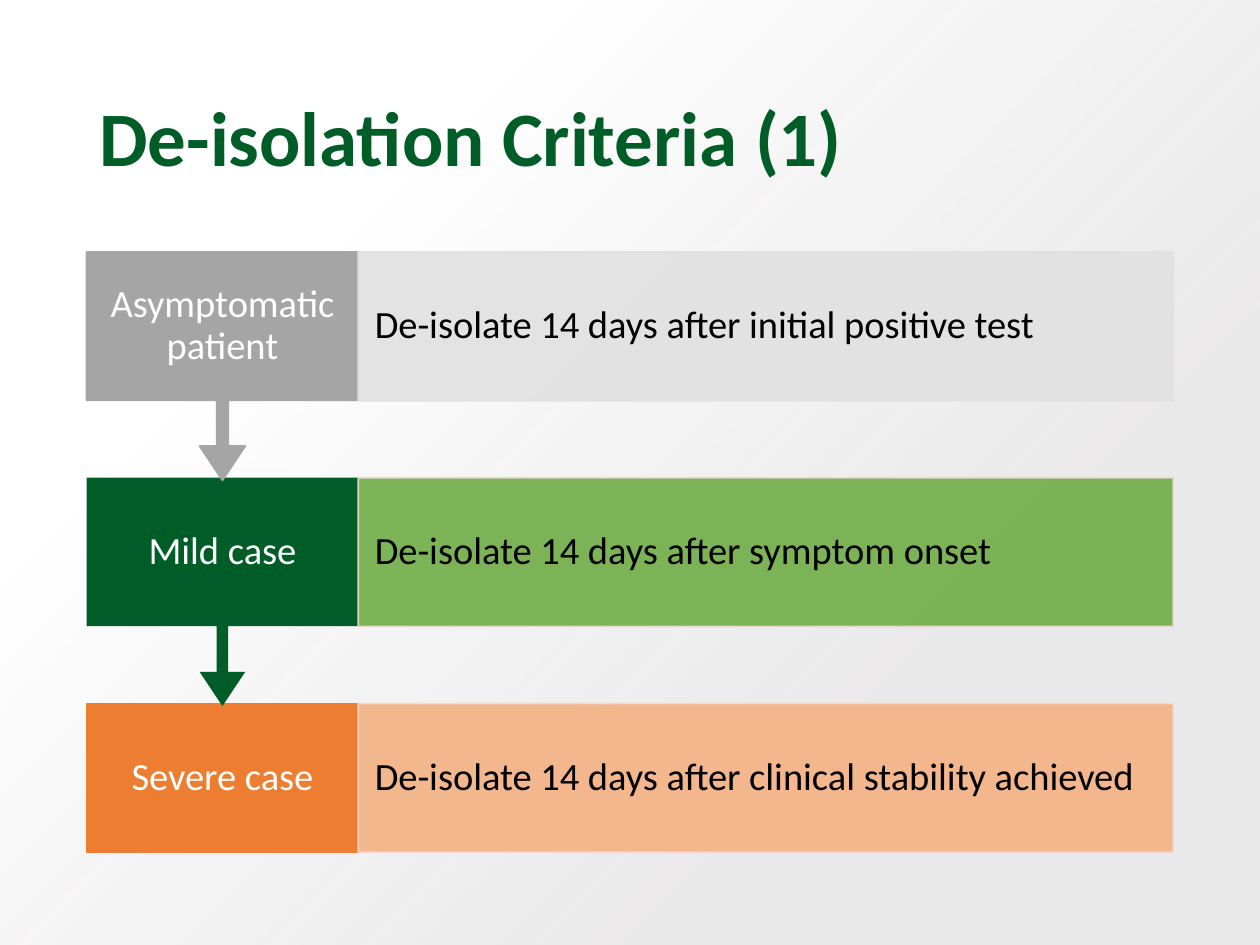
import pptx
import pptx.util
import pptx.dml.color
import pptx.enum.shapes
import pptx.enum.text
import pptx.oxml
import pptx.oxml.ns

Pt = pptx.util.Pt
MSO_SHAPE = pptx.enum.shapes.MSO_SHAPE
PP_ALIGN = pptx.enum.text.PP_ALIGN

TITLE = "De-isolation Criteria (1)"
FONT = "Calibri"
COLORS = {
    "green": "005D28", "light green": "70AD47", "green edge": "EDD9D7",
    "gray": "A5A5A5", "light gray": "E1E1E1",
    "orange": "ED7D31", "light orange": "F4B183", "orange edge": "F8D7CE",
    "backdrop": "E7E6E6", "white": "FFFFFF", "black": "000000",
}
CASES = [
    {"label": "Asymptomatic patient", "rule": "De-isolate 14 days after initial positive test",
     "fill": "gray", "line": "gray", "rule fill": "light gray", "rule line": "light gray"},
    {"label": "Mild case", "rule": "De-isolate 14 days after symptom onset",
     "fill": "green", "line": None, "rule fill": "light green", "rule line": "green edge"},
    {"label": "Severe case", "rule": "De-isolate 14 days after clinical stability achieved",
     "fill": "orange", "line": "orange", "rule fill": "light orange", "rule line": "orange edge"},
]
LEFT, TOP, PITCH = 49.5, 144, 129
LABEL_WIDTH, RULE_WIDTH = 155.25, 465.75
ROW_HEIGHT, CALLOUT_HEIGHT = 85, 130.5
CALLOUT_ADJUSTMENTS = (0.05, 0.1, 0.15, 0.65)
GRADIENT = (
    f'<a:gradFill {pptx.oxml.ns.nsdecls("a")} rotWithShape="1"><a:gsLst>'
    f'<a:gs pos="28000"><a:srgbClr val="{COLORS["backdrop"]}"><a:alpha val="84000"/></a:srgbClr></a:gs>'
    f'<a:gs pos="74000"><a:srgbClr val="{COLORS["white"]}"/></a:gs></a:gsLst>'
    '<a:path path="circle"><a:fillToRect l="100000" t="100000"/></a:path></a:gradFill>'
)


def rgb(name):
    return pptx.dml.color.RGBColor.from_string(COLORS[name])


def set_alpha(color_format_owner, percent):
    for color in color_format_owner.iter(pptx.oxml.ns.qn("a:srgbClr")):
        color.append(pptx.oxml.parse_xml(
            f'<a:alpha {pptx.oxml.ns.nsdecls("a")} val="{percent * 1000}"/>'))


def write(shape, text, size, color, align, bold=False):
    frame = shape.text_frame
    frame.word_wrap = True
    frame.auto_size = pptx.enum.text.MSO_AUTO_SIZE.NONE
    frame.vertical_anchor = pptx.enum.text.MSO_ANCHOR.MIDDLE
    paragraph = frame.paragraphs[0]
    paragraph.alignment = align
    paragraph.line_spacing = 0.9
    run = paragraph.add_run()
    run.text = text
    run.font.name = FONT
    run.font.size = Pt(size)
    run.font.bold = bold
    run.font.color.rgb = rgb(color)


def set_margins(shape, side, vertical):
    frame = shape.text_frame
    frame.margin_left = frame.margin_right = Pt(side)
    frame.margin_top = frame.margin_bottom = Pt(vertical)


def add_box(slide, kind, left, top, width, height, fill, line):
    shape = slide.shapes.add_shape(kind, Pt(left), Pt(top), Pt(width), Pt(height))
    shape.shadow.inherit = False
    shape.fill.solid()
    shape.fill.fore_color.rgb = rgb(fill)
    if line:
        shape.line.color.rgb = rgb(line)
        shape.line.width = Pt(1)
    else:
        shape.line.fill.background()
    return shape


def add_case(slide, index, case):
    top = TOP + index * PITCH
    is_last = index == len(CASES) - 1
    kind = MSO_SHAPE.RECTANGLE if is_last else MSO_SHAPE.DOWN_ARROW_CALLOUT
    height = ROW_HEIGHT if is_last else CALLOUT_HEIGHT
    label = add_box(slide, kind, LEFT, top, LABEL_WIDTH, height, case["fill"], case["line"])
    if not is_last:
        for position, value in enumerate(CALLOUT_ADJUSTMENTS):
            label.adjustments[position] = value
    set_margins(label, 11, 12.25)
    write(label, case["label"], 22, "white", PP_ALIGN.CENTER)
    rule = add_box(slide, MSO_SHAPE.RECTANGLE, LEFT + LABEL_WIDTH, top, RULE_WIDTH, ROW_HEIGHT,
                   case["rule fill"], case["rule line"])
    set_alpha(rule._element.spPr, 90)
    set_margins(rule, 9.4, 22.3)
    write(rule, case["rule"], 22, "black", PP_ALIGN.LEFT)


def main():
    """Build the de-isolation criteria slide."""
    presentation = pptx.Presentation()
    presentation.slide_width, presentation.slide_height = Pt(720), Pt(540)
    slide = presentation.slides.add_slide(presentation.slide_layouts[5])

    title = slide.shapes.title
    title.left, title.top, title.width, title.height = Pt(LEFT), Pt(28.8), Pt(621), Pt(104.4)
    write(title, TITLE, 44, "green", PP_ALIGN.LEFT, bold=True)

    backdrop = add_box(slide, MSO_SHAPE.RECTANGLE, 0, 0, 720, 540, "white", None)
    solid_fill = backdrop._element.spPr.find(pptx.oxml.ns.qn("a:solidFill"))
    backdrop._element.spPr.replace(solid_fill, pptx.oxml.parse_xml(GRADIENT))
    title._element.addprevious(backdrop._element)

    for index, case in reversed(list(enumerate(CASES))):
        add_case(slide, index, case)
    presentation.save("out.pptx")


if __name__ == "__main__":
    main()
